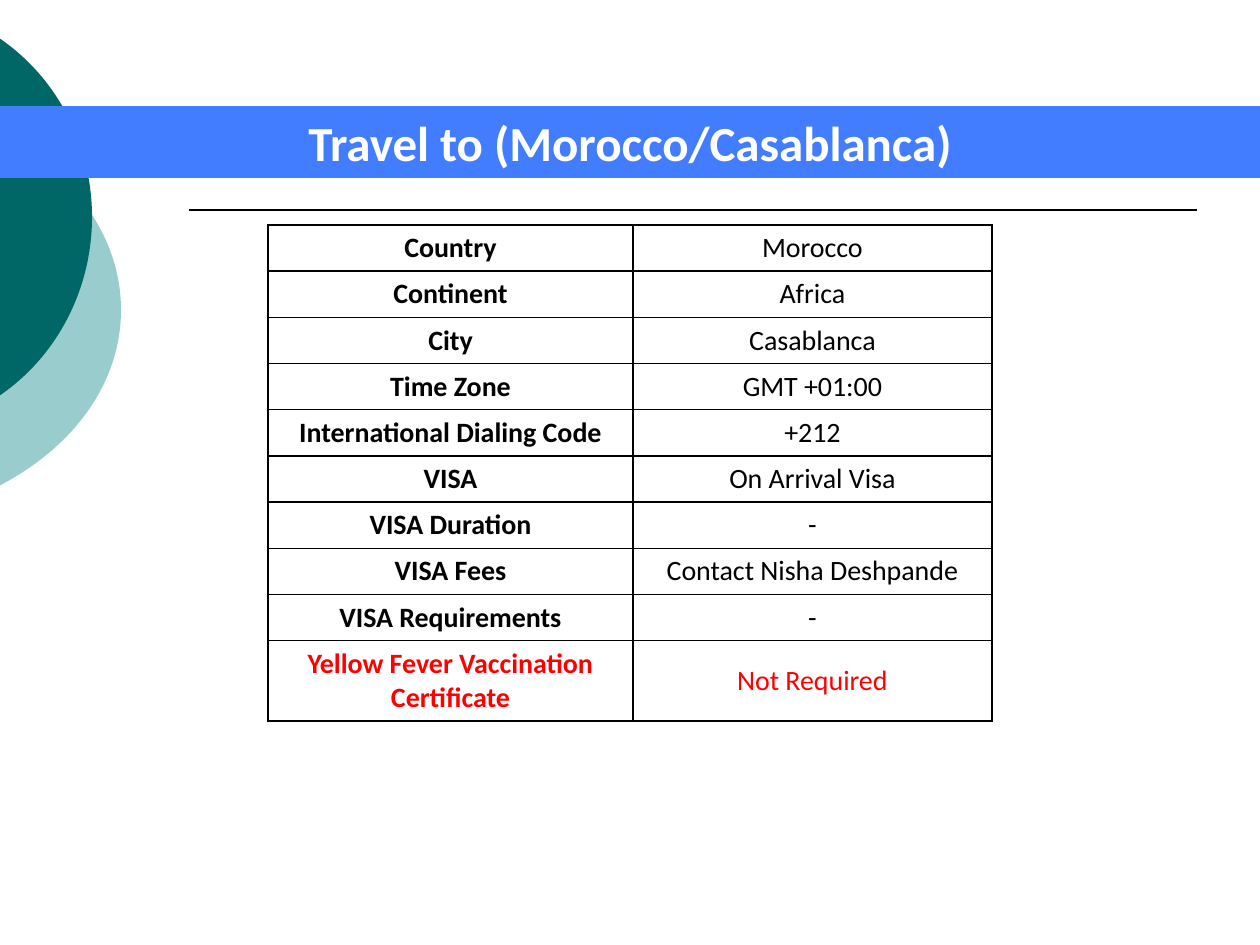
from lxml import etree
from pptx import Presentation
from pptx.dml.color import RGBColor
from pptx.enum.shapes import MSO_CONNECTOR, MSO_SHAPE
from pptx.enum.text import MSO_ANCHOR, PP_ALIGN
from pptx.oxml.ns import qn
from pptx.util import Pt

CENTER = PP_ALIGN.CENTER
MIDDLE = MSO_ANCHOR.MIDDLE
RECTANGLE = MSO_SHAPE.RECTANGLE
STRAIGHT = MSO_CONNECTOR.STRAIGHT

FONT = "Calibri"
BLACK = RGBColor(0x00, 0x00, 0x00)
WHITE = RGBColor(0xFF, 0xFF, 0xFF)
RED = RGBColor(0xFF, 0x00, 0x00)
BLUE = RGBColor(0x43, 0x7D, 0xFF)
TEAL = RGBColor(0x00, 0x66, 0x66)
PALE_TEAL = RGBColor(0x99, 0xCC, 0xCC)

TITLE = "Travel to (Morocco/Casablanca)"
TRAVEL_FACTS = [
    ("Country", "Morocco", BLACK),
    ("Continent", "Africa", BLACK),
    ("City", "Casablanca", BLACK),
    ("Time Zone", "GMT +01:00", BLACK),
    ("International Dialing Code", "+212", BLACK),
    ("VISA", "On Arrival Visa", BLACK),
    ("VISA Duration", "-", BLACK),
    ("VISA Fees", "Contact Nisha Deshpande", BLACK),
    ("VISA Requirements", "-", BLACK),
    ("Yellow Fever Vaccination Certificate", "Not Required", RED),
]

# Frame of each whole disc (left, top, width, height), then the upper half of
# its visible edge as a Bezier curve; the lower half mirrors it.
DISCS = [
    (PALE_TEAL, (-446, 95, 567, 431), [(-1, 134), (76, 174), (121, 239), (121, 310)]),
    (TEAL, (-334, 0, 426, 435), [(-1, 38), (58, 78), (92, 146), (92, 217)]),
]

SLIDE_W, SLIDE_H = 1260, 945
TITLE_TOP, TITLE_H = 106, 72
RULE_LEFT, RULE_RIGHT, RULE_Y = 189, 1197, 210
TABLE_LEFT, TABLE_TOP = 268, 225
COLUMN_WIDTHS = (365, 359)
ROW_H, LAST_ROW_H = 46, 80
CELL_MARGIN = 6


def px(value):
    return round(value * 914400 / 126)


def style_paragraph(paragraph, size, color, bold):
    paragraph.alignment = CENTER
    font = paragraph.font
    font.name, font.size, font.bold = FONT, Pt(size), bold
    font.color.rgb = color


def add_disc(slide, color, frame, curve):
    """Add the visible part of a disc, its path placed inside the whole frame."""
    left, top, width, height = frame
    middle_y = curve[-1][1]
    lower = [(x, 2 * middle_y - y) for x, y in reversed(curve[:-1])]
    builder = slide.shapes.build_freeform(px(left), px(top))
    builder.add_line_segments([(px(left + width), px(top + height))])
    disc = builder.convert_to_shape()

    path = disc._element.spPr.find(".//" + qn("a:path"))
    for step in list(path):
        path.remove(step)
    path.set("w", str(px(width)))
    path.set("h", str(px(height)))
    for command, points in (("a:moveTo", curve[:1]), ("a:cubicBezTo", curve[1:]),
                            ("a:cubicBezTo", lower), ("a:close", [])):
        step = etree.SubElement(path, qn(command))
        for x, y in points:
            etree.SubElement(step, qn("a:pt"), x=str(px(x - left)), y=str(px(y - top)))

    disc.shadow.inherit = False
    disc.fill.solid()
    disc.fill.fore_color.rgb = color
    disc.line.fill.background()


def add_rule(slide):
    rule = slide.shapes.add_connector(
        STRAIGHT, px(RULE_LEFT), px(RULE_Y), px(RULE_RIGHT), px(RULE_Y))
    rule.line.color.rgb = BLACK
    rule.line.width = Pt(1)
    etree.SubElement(rule._element.spPr, qn("a:effectLst"))


def add_title(slide):
    banner = slide.shapes.add_shape(
        RECTANGLE, 0, px(TITLE_TOP), px(SLIDE_W), px(TITLE_H))
    banner.shadow.inherit = False
    banner.fill.solid()
    banner.fill.fore_color.rgb = BLUE
    banner.line.fill.background()
    banner.text_frame.word_wrap = True
    banner.text_frame.vertical_anchor = MIDDLE
    banner.text_frame.text = TITLE
    style_paragraph(banner.text_frame.paragraphs[0], 28, WHITE, True)


def add_borders(cell):
    properties = cell._tc.get_or_add_tcPr()
    for position, side in enumerate(("a:lnL", "a:lnR", "a:lnT", "a:lnB")):
        border = etree.Element(qn(side), w=str(Pt(1)))
        fill = etree.SubElement(border, qn("a:solidFill"))
        etree.SubElement(fill, qn("a:srgbClr"), val=str(BLACK))
        properties.insert(position, border)


def add_facts_table(slide):
    heights = [ROW_H] * (len(TRAVEL_FACTS) - 1) + [LAST_ROW_H]
    table = slide.shapes.add_table(
        len(TRAVEL_FACTS), len(COLUMN_WIDTHS), px(TABLE_LEFT), px(TABLE_TOP),
        px(sum(COLUMN_WIDTHS)), px(sum(heights))).table
    table.first_row = table.horz_banding = False
    for column, width in zip(table.columns, COLUMN_WIDTHS):
        column.width = px(width)
    for row, height, (label, value, color) in zip(table.rows, heights, TRAVEL_FACTS):
        row.height = px(height)
        for cell, text, bold in zip(row.cells, (label, value), (True, False)):
            cell.text = text
            cell.vertical_anchor = MIDDLE
            cell.margin_top = cell.margin_bottom = px(CELL_MARGIN)
            cell.fill.background()
            style_paragraph(cell.text_frame.paragraphs[0], 16, color, bold)
            add_borders(cell)


def main():
    presentation = Presentation()
    presentation.slide_width, presentation.slide_height = px(SLIDE_W), px(SLIDE_H)
    slide = presentation.slides.add_slide(presentation.slide_layouts[6])
    for color, frame, curve in DISCS:
        add_disc(slide, color, frame, curve)
    add_rule(slide)
    add_title(slide)
    add_facts_table(slide)
    presentation.save("out.pptx")


if __name__ == "__main__":
    main()
